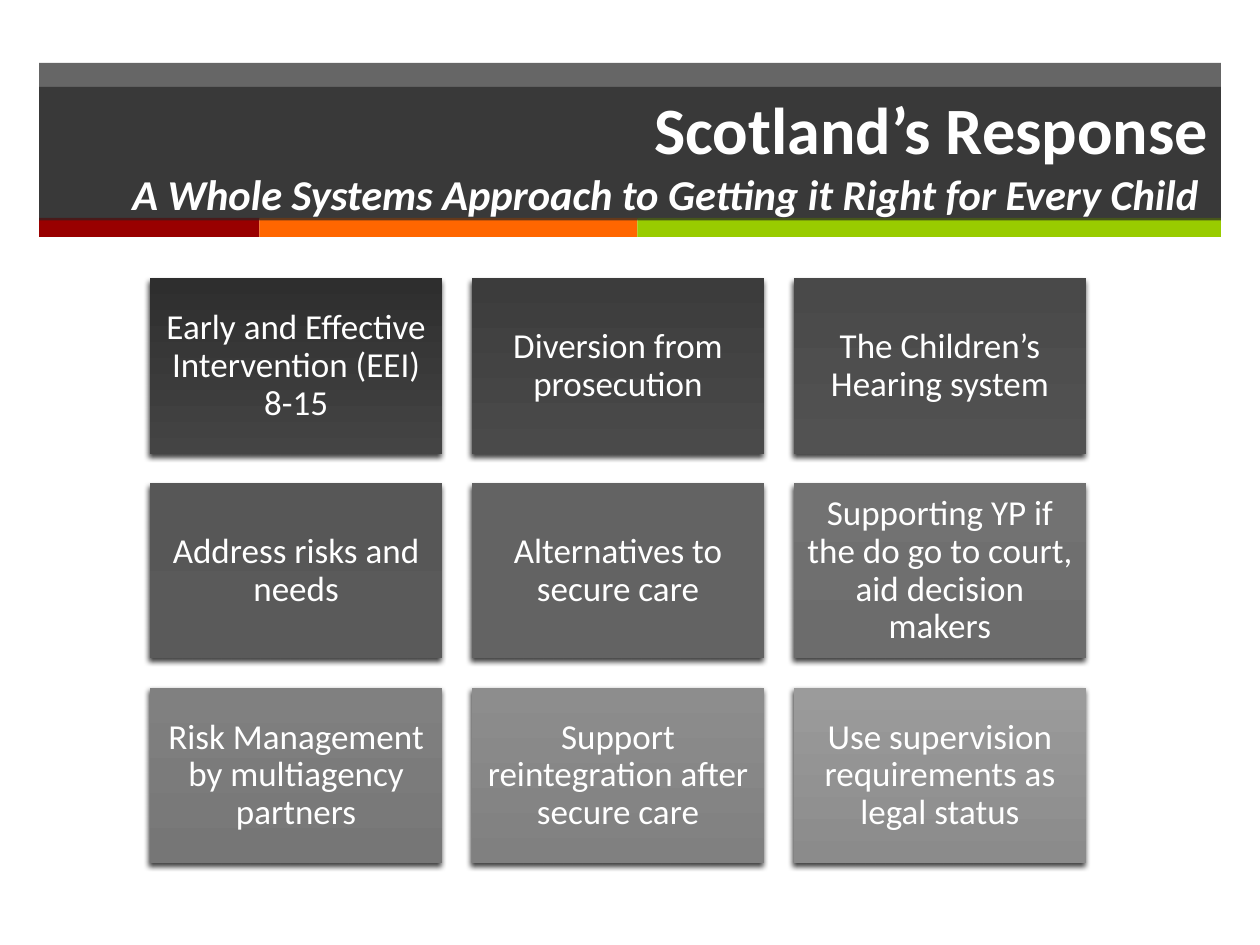
from lxml.etree import SubElement
from pptx import Presentation
from pptx.dml.color import RGBColor
from pptx.enum.shapes import MSO_SHAPE
from pptx.enum.text import MSO_ANCHOR, MSO_AUTO_SIZE, PP_ALIGN
from pptx.oxml.ns import qn
from pptx.util import Inches, Pt

FONT = "Calibri"
WHITE = RGBColor(0xFF, 0xFF, 0xFF)
BAND = RGBColor(0x26, 0x26, 0x26)
RED = RGBColor(0x99, 0x00, 0x00)
ORANGE = RGBColor(0xFF, 0x66, 0x00)
GREEN = RGBColor(0x99, 0xCC, 0x00)

# Card text with the bottom and top greys of its gradient
CARDS = [
    ("Early and Effective Intervention (EEI) 8-15", 0x44, 0x2E),
    ("Diversion from prosecution", 0x4A, 0x3C),
    ("The Children’s Hearing system", 0x52, 0x49),
    ("Address risks and needs", 0x5A, 0x57),
    ("Alternatives to secure care", 0x63, 0x65),
    ("Supporting YP if the do go to court, aid decision makers", 0x6C, 0x72),
    ("Risk Management by multiagency partners", 0x76, 0x80),
    ("Support reintegration after secure care", 0x80, 0x8D),
    ("Use supervision requirements as legal status", 0x8B, 0x9B),
]


def set_fill(shape, color, alpha=100):
    shape.fill.solid()
    shape.fill.fore_color.rgb = color
    if alpha < 100:
        clr = shape._element.spPr.find(qn("a:solidFill"))[0]
        SubElement(clr, qn("a:alpha"), val=str(alpha * 1000))


def add_rect(s, left, top, width, height):
    sp = s.shapes.add_shape(MSO_SHAPE.RECTANGLE, Inches(left), Inches(top),
                            Inches(width), Inches(height))
    sp.line.fill.background()
    sp.shadow.inherit = False
    return sp


def add_shadow(sp):
    effects = sp._element.spPr.find(qn("a:effectLst"))
    shadow = SubElement(effects, qn("a:outerShdw"), blurRad=str(Pt(3)),
                        dist=str(Pt(2)), dir=str(110 * 60000), rotWithShape="0")
    clr = SubElement(shadow, qn("a:srgbClr"), val="000000")
    SubElement(clr, qn("a:alpha"), val="75000")


def add_header(s, left, top, width):
    # Dark band
    set_fill(add_rect(s, left, top, width, 1.24), BAND, 70)

    # Coloured stripes
    x = left
    for color, stripe_width in ((RED, 1.75), (ORANGE, 3), (GREEN, width - 4.75)):
        set_fill(add_rect(s, x, top + 1.23, stripe_width, 0.15), color)
        x += stripe_width

    # Title, brought in front of the band
    title = s.shapes.title
    title.left, title.top = Inches(left), Inches(top + 0.19)
    title.width, title.height = Inches(width), Inches(1.06)
    set_fill(title, BAND, 70)
    s.shapes._spTree.append(title._element)
    tf = title.text_frame
    tf.word_wrap = True
    tf.auto_size = MSO_AUTO_SIZE.NONE
    tf.vertical_anchor = MSO_ANCHOR.MIDDLE
    p = tf.paragraphs[0]
    p.alignment = PP_ALIGN.RIGHT
    r = p.add_run()
    r.text = "Scotland’s Response"
    r.font.size = Pt(37.8)
    p.add_line_break()
    sub = p.add_run()
    sub.text = "A Whole Systems Approach to Getting it Right for Every Child "
    sub.font.size = Pt(24.3)
    sub.font.italic = True
    for run in (r, sub):
        run.font.name = FONT
        run.font.bold = True
        run.font.color.rgb = WHITE


def add_card(s, left, top, width, height, text, bottom_grey, top_grey):
    sp = add_rect(s, left, top, width, height)
    sp.fill.gradient()
    sp.fill.gradient_angle = 90
    for stop, grey in zip(sp.fill.gradient_stops, (bottom_grey, top_grey)):
        stop.color.rgb = RGBColor(grey, grey, grey)
    stops = sp.fill.gradient_stops
    stops[0].position, stops[1].position = 0, 1
    add_shadow(sp)

    tf = sp.text_frame
    tf.word_wrap = True
    tf.vertical_anchor = MSO_ANCHOR.MIDDLE
    tf.margin_left = tf.margin_right = Inches(0.08)
    tf.margin_top = tf.margin_bottom = Inches(0.08)
    p = tf.paragraphs[0]
    p.text = text
    p.alignment = PP_ALIGN.CENTER
    p.line_spacing = 0.9
    p.font.name = FONT
    p.font.size = Pt(20)
    p.font.color.rgb = WHITE


def add_card_grid(s, left, top, width, height, columns=3, gap=0.235):
    rows = len(CARDS) // columns
    card_w = (width - gap * (columns - 1)) / columns
    card_h = (height - gap * (rows - 1)) / rows
    for i, card in enumerate(CARDS):
        row, col = divmod(i, columns)
        add_card(s, left + col * (card_w + gap), top + row * (card_h + gap),
                 card_w, card_h, *card)


def main():
    prs = Presentation()
    prs.slide_width, prs.slide_height = Inches(10), Inches(7.5)
    s = prs.slides.add_slide(prs.slide_layouts[5])
    add_header(s, 0.31, 0.5, 9.38)
    add_card_grid(s, 1.19, 2.21, 7.43, 4.64)
    prs.save("out.pptx")


if __name__ == "__main__":
    main()
